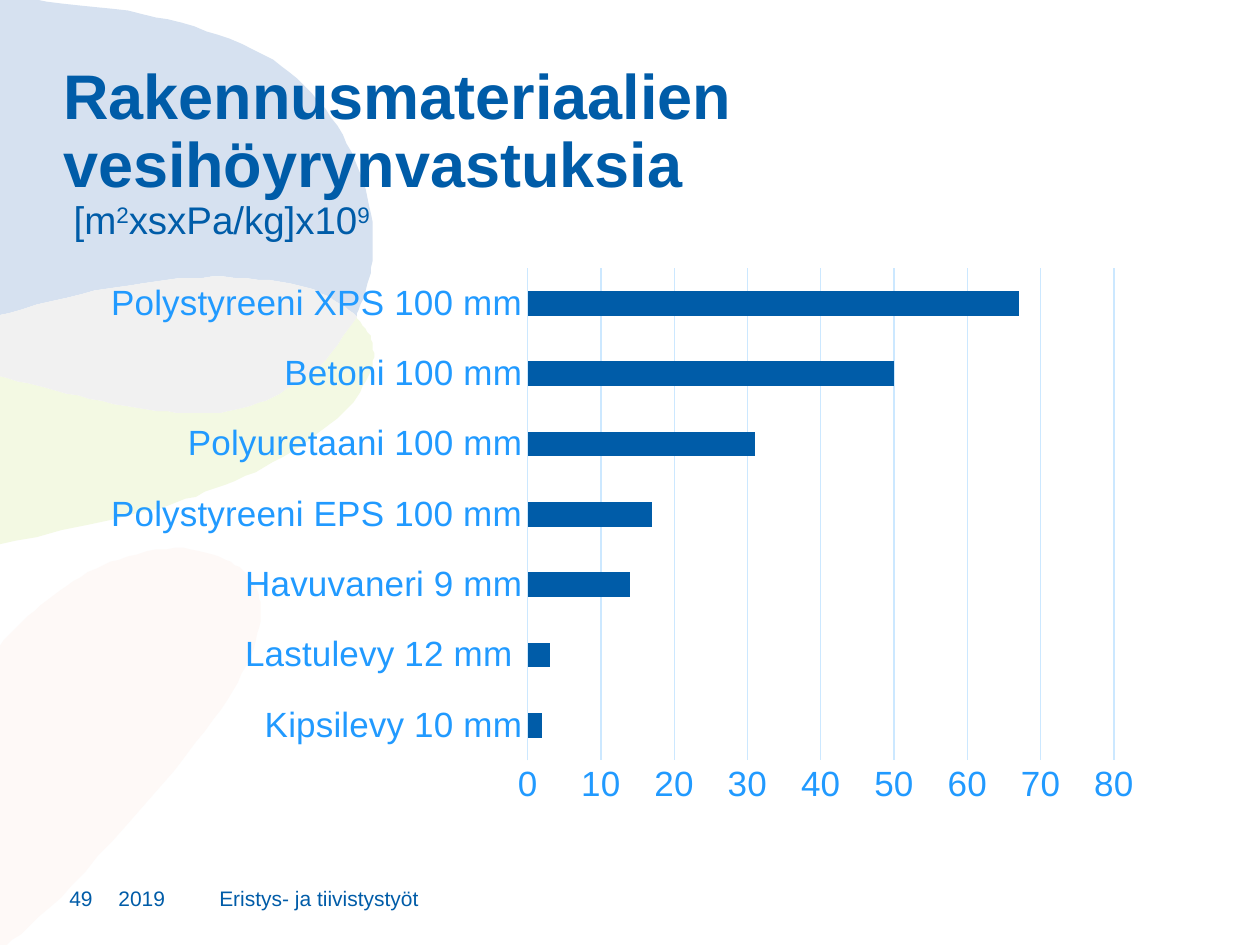
from lxml import etree
from pptx import Presentation
from pptx.chart.data import CategoryChartData
from pptx.dml.color import RGBColor
from pptx.enum.chart import XL_CHART_TYPE, XL_TICK_MARK
from pptx.enum.text import MSO_ANCHOR, MSO_AUTO_SIZE, PP_ALIGN
from pptx.oxml.ns import qn
from pptx.util import Pt

BAR_CLUSTERED = XL_CHART_TYPE.BAR_CLUSTERED
NO_TICK = XL_TICK_MARK.NONE
TOP, BOTTOM = MSO_ANCHOR.TOP, MSO_ANCHOR.BOTTOM
LEFT = PP_ALIGN.LEFT
NO_AUTOFIT = MSO_AUTO_SIZE.NONE

THEME = {
    "font": "Arial",
    "blue": "005CA8", "label": "219AFF", "grid": "CCE8FF",
    "petal_blue": "D6E1F0", "petal_green": "F3F9E3",
    "petal_overlap": "F1F1F1", "petal_coral": "FEF9F7",
    "title": 36, "unit": 22, "axis": 20, "footer": 12,
}

TITLE = "Rakennusmateriaalien vesihöyrynvastuksia"
# text, bold, superscript
UNIT = [(" ", True, False), ("[m", False, False), ("2", False, True),
        ("xsxPa/kg]x10", False, False), ("9", False, True)]

RESISTANCES = [
    ("Kipsilevy 10 mm", 2),
    ("Lastulevy 12 mm ", 3),
    ("Havuvaneri 9 mm", 14),
    ("Polystyreeni EPS 100 mm", 17),
    ("Polyuretaani 100 mm", 31),
    ("Betoni 100 mm", 50),
    ("Polystyreeni XPS 100 mm", 67),
]
PLOT_LAYOUT = {"x": 0.41, "y": 0.02, "w": 0.55, "h": 0.88}

# text, left, width
FOOTERS = [("2019", 67.7, 50.4), ("Eristys- ja tiivistystyöt", 125.3, 289.4),
           ("49", 39.6, 28.1)]

# Petal edges; neighbouring petals share them
BLUE_EDGE = [(21.6, 0), (73, 6.5), (118, 17.5), (155.5, 34.5), (182, 57.5),
             (201, 87), (211, 117.5), (213.2, 145), (209.5, 165.5), (203.5, 180.7)]
OVERLAP_TOP = [(0, 180), (47, 168), (88, 160.8), (128, 158.4), (165.5, 162),
               (187, 169), (203.5, 180.7)]
OVERLAP_BOTTOM = [(203.5, 180.7), (186, 206), (164, 222.5), (139, 233),
                  (112, 236.4), (78, 232.8), (38, 225), (0, 214.8)]
GREEN_EDGE = [(203.5, 180.7), (211.5, 192), (213.5, 204), (210, 216),
              (199.5, 232.5), (176.5, 251.5), (145.5, 269.5), (111.5, 283.5),
              (75, 294.5), (0, 311)]
CORAL_EDGE = [(0, 368.6), (19.5, 349), (42.5, 332), (67.7, 319.7), (100, 313.2),
              (125.3, 318.2), (141, 328.3), (148.3, 342), (148.3, 358.6),
              (138.2, 385.2), (117.4, 417.6), (79.2, 463.7), (34.6, 512.6), (4.3, 540)]
PETALS = [
    ("petal_coral", [CORAL_EDGE, [(0, 540)]]),
    ("petal_green", [GREEN_EDGE, OVERLAP_BOTTOM[::-1]]),
    ("petal_blue", [BLUE_EDGE, OVERLAP_TOP[::-1], [(0, 0)]]),
    ("petal_overlap", [OVERLAP_TOP, OVERLAP_BOTTOM]),
]


def color(name):
    return RGBColor.from_string(THEME[name])


def style_font(font, size, color_name="blue", bold=False):
    font.name = THEME["font"]
    font.size = Pt(THEME[size])
    font.bold = bold
    font.color.rgb = color(color_name)


def smooth(points, steps=6):
    """Catmull-Rom curve through the points, as a list of short steps."""
    ends = [points[0], *points, points[-1]]
    curve = [points[0]]
    for a, b, c, d in zip(ends, ends[1:], ends[2:], ends[3:]):
        for i in range(1, steps + 1):
            t = i / steps
            curve.append(tuple(
                q + t / 2 * (r - p + t * (2 * p - 5 * q + 4 * r - s
                                          + t * (3 * (q - r) + s - p)))
                for p, q, r, s in zip(a, b, c, d)))
    return curve


def add_petal(slide, color_name, edges):
    outline = [pt for edge in edges for pt in smooth(edge)]
    builder = slide.shapes.build_freeform(*outline[0], scale=Pt(1))
    builder.add_line_segments(outline[1:], close=True)
    sp = builder.convert_to_shape()
    sp.shadow.inherit = False
    sp.fill.solid()
    sp.fill.fore_color.rgb = color(color_name)
    sp.line.fill.background()


def set_frame(tf, anchor):
    tf.margin_left = tf.margin_right = tf.margin_top = tf.margin_bottom = 0
    tf.word_wrap = True
    tf.auto_size = NO_AUTOFIT
    tf.vertical_anchor = anchor


def fill_title(sp):
    sp.left, sp.top, sp.width, sp.height = Pt(36), Pt(37.4), Pt(648), Pt(72)
    set_frame(sp.text_frame, TOP)
    p = sp.text_frame.paragraphs[0]
    p.alignment = LEFT
    p.line_spacing = 0.9
    r = p.add_run()
    r.text = TITLE
    style_font(r.font, "title", bold=True)
    p.add_line_break()
    br = p._p.find(qn("a:br"))
    etree.SubElement(br, qn("a:rPr"), sz=str(THEME["title"] * 100))
    for text, bold, raised in UNIT:
        r = p.add_run()
        r.text = text
        style_font(r.font, "unit", bold=bold)
        if raised:
            r._r.get_or_add_rPr().set("baseline", "30000")


def add_footer(slide, text, left, width):
    sp = slide.shapes.add_textbox(Pt(left), Pt(509), Pt(width), Pt(11.5))
    set_frame(sp.text_frame, BOTTOM)
    sp.text_frame.text = text
    style_font(sp.text_frame.paragraphs[0].runs[0].font, "footer")


def set_plot_layout(chart):
    plot_area = chart._chartSpace.chart.plotArea
    layout = plot_area.find(qn("c:layout"))
    if layout is None:
        layout = etree.Element(qn("c:layout"))
        plot_area.insert(0, layout)
    manual = etree.SubElement(layout, qn("c:manualLayout"))
    settings = {"layoutTarget": "inner", "xMode": "edge", "yMode": "edge", **PLOT_LAYOUT}
    for tag, value in settings.items():
        etree.SubElement(manual, qn(f"c:{tag}"), val=str(value))


def add_resistance_chart(slide):
    data = CategoryChartData()
    data.categories = [name for name, _ in RESISTANCES]
    data.add_series("Series 1", [value for _, value in RESISTANCES])
    chart = slide.shapes.add_chart(BAR_CLUSTERED, Pt(51.8), Pt(146.9),
                                   Pt(609.1), Pt(319.7), data).chart
    chart.has_legend = False
    chart.has_title = False
    style_font(chart.font, "axis", "label")
    plot = chart.plots[0]
    plot.gap_width = 182
    plot.vary_by_categories = False
    fill = plot.series[0].format.fill
    fill.solid()
    fill.fore_color.rgb = color("blue")

    cat, val = chart.category_axis, chart.value_axis
    for axis in (cat, val):
        axis.major_tick_mark = axis.minor_tick_mark = NO_TICK
        style_font(axis.tick_labels.font, "axis", "label")
    val.minimum_scale, val.maximum_scale, val.major_unit = 0, 80, 10
    val.has_major_gridlines = True
    val.format.line.fill.background()
    for line in (cat.format.line, val.major_gridlines.format.line):
        line.color.rgb = color("grid")
        line.width = Pt(0.75)
    set_plot_layout(chart)


def main():
    prs = Presentation()
    prs.slide_width, prs.slide_height = Pt(720), Pt(540)
    slide = prs.slides.add_slide(prs.slide_layouts[5])
    title = slide.shapes.title
    for color_name, edges in PETALS:
        add_petal(slide, color_name, edges)
    for footer in FOOTERS:
        add_footer(slide, *footer)
    add_resistance_chart(slide)
    fill_title(title)
    slide.shapes._spTree.append(title._element)
    prs.save("out.pptx")


if __name__ == "__main__":
    main()
